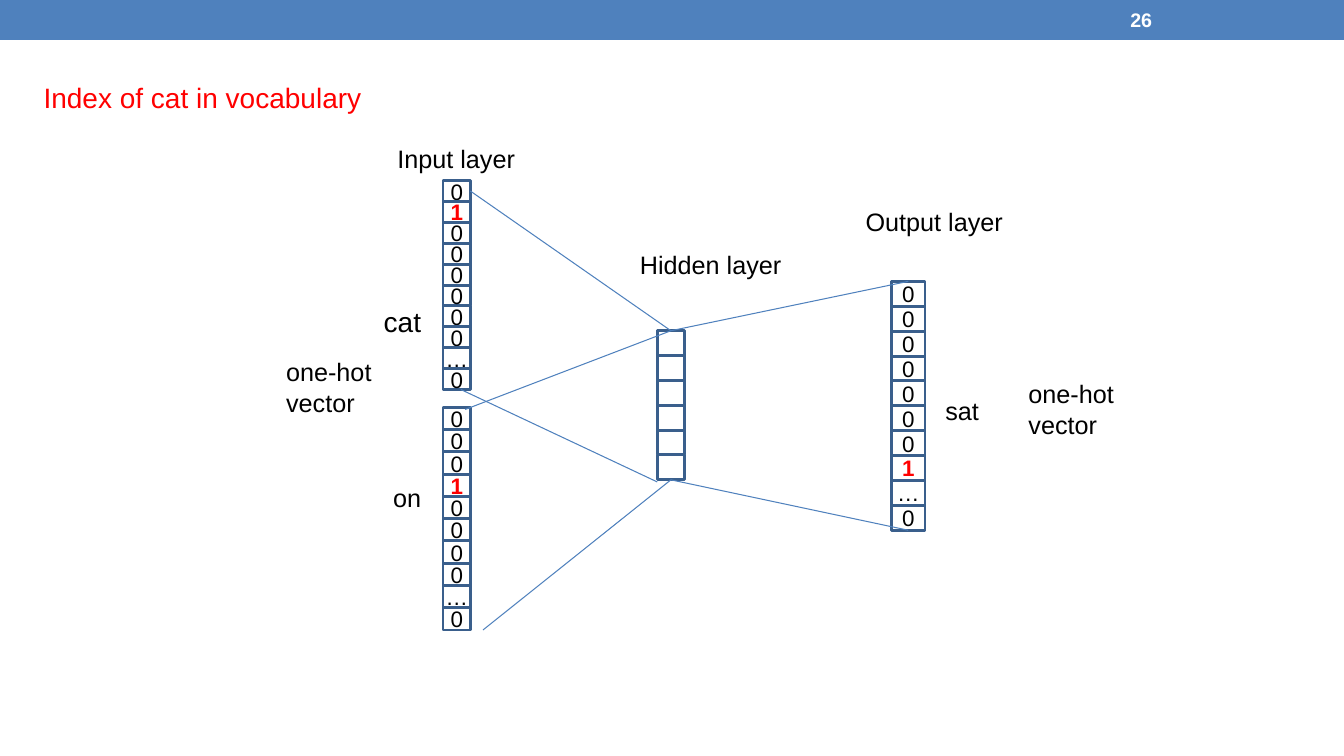
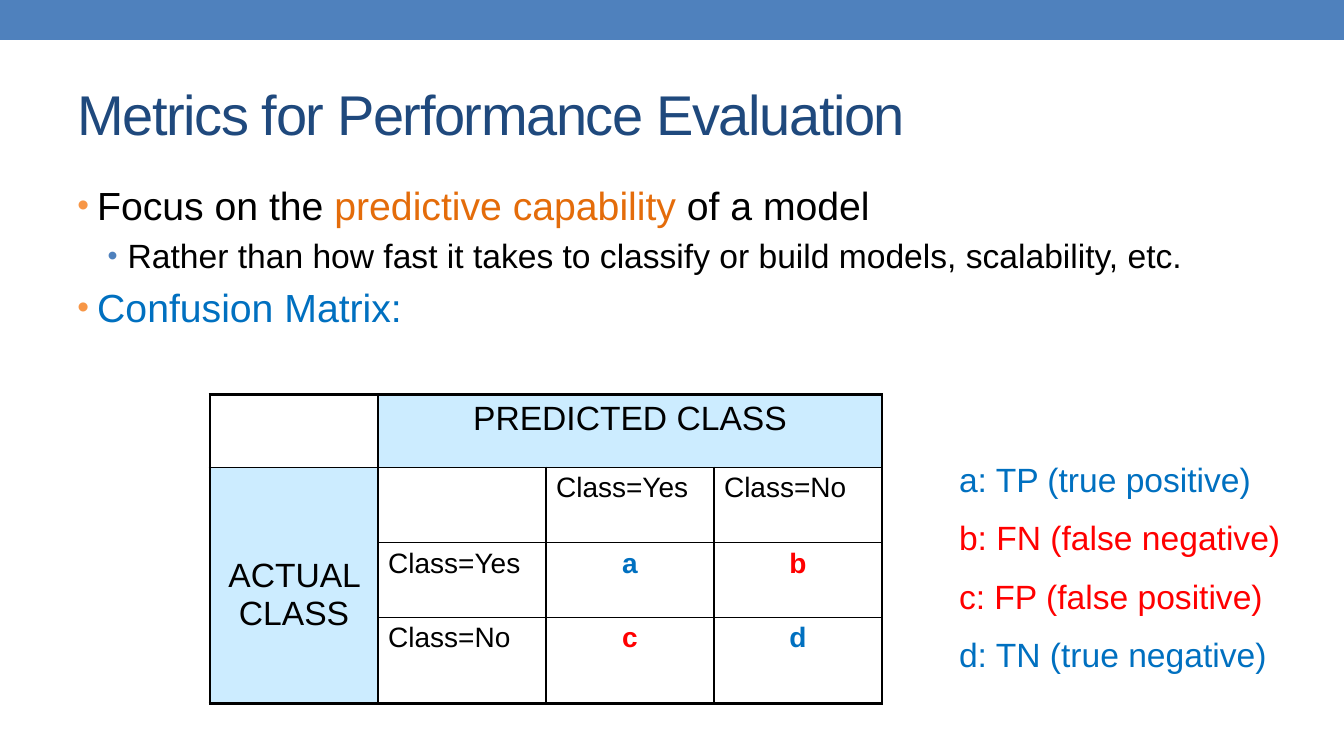
from lxml import etree
from pptx import Presentation
from pptx.dml.color import RGBColor
from pptx.enum.shapes import MSO_CONNECTOR, MSO_SHAPE
from pptx.enum.text import MSO_ANCHOR, MSO_AUTO_SIZE, PP_ALIGN
from pptx.oxml.ns import qn
from pptx.util import Pt

PX = 9525
FONT = "Arial"
BLACK = RGBColor(0x00, 0x00, 0x00)
WHITE = RGBColor(0xFF, 0xFF, 0xFF)
RED = RGBColor(0xFF, 0x00, 0x00)
BLUE = RGBColor(0x00, 0x70, 0xC0)
BAND_BLUE = RGBColor(0x4F, 0x81, 0xBD)
CELL_LINE = RGBColor(0x3A, 0x5F, 0x8C)
NAVY = RGBColor(0x1F, 0x49, 0x7D)
ORANGE = RGBColor(0xE4, 0x6C, 0x0A)
BULLET_ORANGE = RGBColor(0xF7, 0x96, 0x46)
PALE_BLUE = RGBColor(0xCC, 0xEC, 0xFF)
NO_STYLE = "{2D5ABB26-0587-4C30-8999-92F81FD0307C}"


def format_runs(paragraphs, size, color, bold=False):
    for p in paragraphs:
        for r in p.runs:
            r.font.name = FONT
            r.font.size = Pt(size)
            r.font.bold = bold
            r.font.color.rgb = color


def add_label(slide, text, box, size=18, color=BLACK, bold=False):
    sp = slide.shapes.add_textbox(*(PX * v for v in box))
    tf = sp.text_frame
    tf.text = text
    tf.word_wrap = False
    tf.auto_size = MSO_AUTO_SIZE.SHAPE_TO_FIT_TEXT
    format_runs(tf.paragraphs, size, color, bold)
    return tf


prs = Presentation()
prs.slide_width, prs.slide_height = PX * 1280, PX * 720
network = prs.slides.add_slide(prs.slide_layouts[6])
metrics = prs.slides.add_slide(prs.slide_layouts[1])

# The band belongs to the master, so every slide shows it
band = network.shapes.add_shape(MSO_SHAPE.RECTANGLE, 0, 0, prs.slide_width, PX * 38)
band.shadow.inherit = False
band.fill.solid()
band.fill.fore_color.rgb = BAND_BLUE
band.line.fill.background()
band.element.nvSpPr.cNvPr.set("id", "20")
prs.slide_master.shapes.element.insert(2, band.element)

# Slide 1: neural network
tf = add_label(network, "26", (1067, 2, 150, 34), 14, WHITE, True)
tf.word_wrap = True
tf.auto_size = MSO_AUTO_SIZE.NONE
tf.vertical_anchor = MSO_ANCHOR.MIDDLE

vectors = {
    "cat": (422, 172, 26, 199, "01000000…0"),
    "on": (422, 388, 26, 212, "00010000…0"),
    "hidden": (626, 315, 26, 142, " " * 6),
    "output": (849, 268, 32, 237, "00000001…0"),
}
cells = {}
for name, (left, top, width, height, values) in vectors.items():
    group = network.shapes.add_group_shape()
    pitch = PX * height / len(values)
    cells[name] = []
    for i, value in enumerate(values):
        sp = group.shapes.add_shape(MSO_SHAPE.RECTANGLE, PX * left, round(PX * top + i * pitch),
                                    PX * width, round(pitch))
        sp.shadow.inherit = False
        sp.fill.background()
        sp.line.color.rgb = CELL_LINE
        sp.line.width = Pt(2.08)
        tf = sp.text_frame
        tf.margin_left = tf.margin_right = tf.margin_top = tf.margin_bottom = 0
        tf.word_wrap = False
        tf.vertical_anchor = MSO_ANCHOR.MIDDLE
        tf.text = value.strip()
        tf.paragraphs[0].alignment = PP_ALIGN.CENTER
        hot = value == "1"
        format_runs(tf.paragraphs, 16, RED if hot else BLACK, hot)
        cells[name].append(sp)

for text, *box in [
    ("on", 365, 455, 46, 38),
    ("Input layer", 369, 132, 132, 38),
    ("Hidden layer", 600, 233, 156, 38),
    ("Output layer", 815, 192, 152, 38),
    ("sat", 891, 372, 52, 38),
    ("one-hot\nvector", 263, 335, 102, 68),
    ("one-hot\nvector", 970, 356, 102, 68),
]:
    add_label(network, text, box)
add_label(network, "cat", (356, 285, 56, 42), 20)
add_label(network, "Index of cat in vocabulary", (32, 72, 325, 42), 20, RED)

# Each end is either a (shape, side) to join or a free (x, y) point
hidden_top, hidden_bottom = (cells["hidden"][0], 0), (cells["hidden"][-1], 2)
for start, end in [
    ((cells["cat"][0], 3), hidden_top),
    ((443, 390), hidden_top),
    ((439, 371), (626, 459)),
    ((460, 600), hidden_bottom),
    (hidden_top, (cells["output"][0], 0)),
    (hidden_bottom, (cells["output"][-1], 2)),
]:
    points = [PX * v if isinstance(v, int) else 0 for v in (*start, *end)]
    line = network.shapes.add_connector(MSO_CONNECTOR.STRAIGHT, *points)
    if not isinstance(start[0], int):
        line.begin_connect(*start)
    if not isinstance(end[0], int):
        line.end_connect(*end)
    line.line.color.rgb = BAND_BLUE
    line.line.width = Pt(0.75)
    etree.SubElement(line.element.spPr, qn("a:effectLst"))

# Slide 2: title and list
title, body = metrics.placeholders
for sp, top, height in [(title, 56, 104), (body, 168, 512)]:
    sp.left, sp.top, sp.width, sp.height = PX * 64, PX * top, PX * 1152, PX * height
    sp.text_frame.auto_size = MSO_AUTO_SIZE.NONE

tf = title.text_frame
tf.text = "Metrics for Performance Evaluation"
tf.vertical_anchor = MSO_ANCHOR.MIDDLE
p = tf.paragraphs[0]
p.alignment = PP_ALIGN.LEFT
format_runs([p], 40, NAVY)
p.runs[0].font._element.set("spc", "-100")

tf = body.text_frame
for i, (level, runs) in enumerate([
    (0, [("Focus on the ", BLACK), ("predictive capability ", ORANGE), ("of a model", BLACK)]),
    (1, [("Rather than how fast it takes to classify or build models, scalability, etc.", BLACK)]),
    (0, [("Confusion Matrix:", BLUE)]),
]):
    p = tf.add_paragraph() if i else tf.paragraphs[0]
    p.level = level
    for text, color in runs:
        r = p.add_run()
        r.text = text
    format_runs([p], 24 if level else 28, BLACK)
    for r, (text, color) in zip(p.runs, runs):
        r.font.color.rgb = color
    pPr = p._p.get_or_add_pPr()
    pPr.set("marL", str(PX * (48 if level else 19)))
    pPr.set("indent", str(PX * -19))
    bullet_color = etree.SubElement(pPr, qn("a:buClr"))
    etree.SubElement(bullet_color, qn("a:srgbClr"), val=str(BAND_BLUE if level else BULLET_ORANGE))
    etree.SubElement(pPr, qn("a:buSzPct"), val="85000")
    etree.SubElement(pPr, qn("a:buFont"), typeface=FONT)
    etree.SubElement(pPr, qn("a:buChar"), char="•")

# Slide 2: confusion matrix
row_heights = [69, 72, 71, 82]
matrix = [
    ["", "PREDICTED CLASS", "", ""],
    ["ACTUAL CLASS", "", "Class=Yes", "Class=No"],
    ["", "Class=Yes", "a", "b"],
    ["", "Class=No", "c", "d"],
]
outcome_colors = {"a": BLUE, "b": RED, "c": RED, "d": BLUE}
frame = metrics.shapes.add_table(4, 4, PX * 200, PX * 376, PX * 640, PX * sum(row_heights))
frame.element.find(".//" + qn("a:tableStyleId")).text = NO_STYLE
table = frame.table
table.first_row = table.horz_banding = False
for row, height in zip(table.rows, row_heights):
    row.height = PX * height
table.cell(0, 1).merge(table.cell(0, 3))
table.cell(1, 0).merge(table.cell(3, 0))

for i, texts in enumerate(matrix):
    for j, text in enumerate(texts):
        cell = table.cell(i, j)
        if cell.is_spanned:
            continue
        outer_edges = {
            "a:lnL": j == 0,
            "a:lnR": j + cell.span_width == 4,
            "a:lnT": i == 0,
            "a:lnB": i + cell.span_height == 4,
        }
        tcPr = cell._tc.get_or_add_tcPr()
        for tag, outer in outer_edges.items():
            ln = etree.SubElement(tcPr, qn(tag), w=str(Pt(2.25 if outer else 1)))
            solid = etree.SubElement(ln, qn("a:solidFill"))
            etree.SubElement(solid, qn("a:srgbClr"), val=str(BLACK))
        if cell.is_merge_origin:
            cell.fill.solid()
            cell.fill.fore_color.rgb = PALE_BLUE
        else:
            cell.fill.background()
        cell.text = text
        p = cell.text_frame.paragraphs[0]
        outcome = text in outcome_colors
        if outcome or cell.is_merge_origin:
            p.alignment = PP_ALIGN.CENTER
        format_runs([p], 24 if cell.is_merge_origin else 20, outcome_colors.get(text, BLACK), outcome)
actual = table.cell(1, 0)
actual.vertical_anchor = MSO_ANCHOR.MIDDLE
actual.margin_top = PX * 23

# Slide 2: legend
legend = ["a: TP (true positive)", "b: FN (false negative)",
          "c: FP (false positive)", "d: TN (true negative)"]
tf = add_label(metrics, "\n".join(legend), (904, 432, 336, 223), 24)
tf.word_wrap = True
for i, p in enumerate(tf.paragraphs):
    p.runs[0].font.color.rgb = outcome_colors[p.text[0]]
    if i:
        p.space_before = Pt(13)

prs.save("out.pptx")
